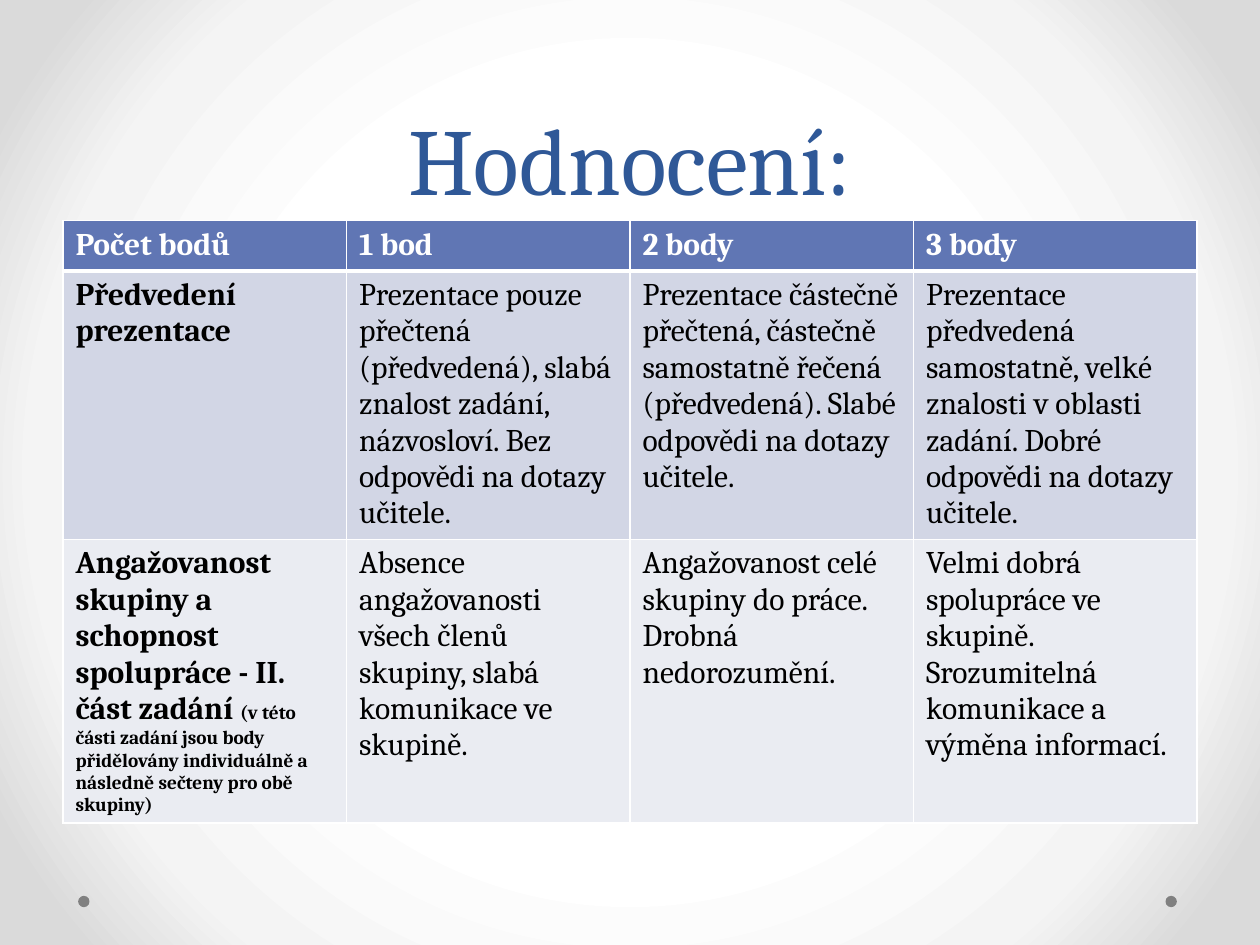
from lxml import etree
from pptx import Presentation
from pptx.dml.color import RGBColor
from pptx.enum import shapes, text
from pptx.oxml import ns, parse_xml
from pptx.util import Inches, Pt

FONT = "Cambria"
COLORS = {
    "title": "2F5897", "header": "6076B4", "band": "D2D6E5", "light": "EAECF2",
    "white": "FFFFFF", "black": "000000", "dot": "808080",
}
BACKDROP = [(50, "FFFFFF"), (76, "F4F4F4"), (92, "DADADA")]
ROW_HEIGHTS = [0.4, 2.13, 2.25]
ROW_FILLS = ["header", "band", "light"]
NOTE = ("(v této části zadání jsou body přidělovány individuálně "
        "a následně sečteny pro obě skupiny)")
RUBRIC = [
    ["Počet bodů", "1 bod", "2 body", "3 body"],
    ["Předvedení prezentace",
     "Prezentace pouze přečtená (předvedená), slabá znalost zadání, názvosloví. "
     "Bez odpovědi na dotazy učitele.",
     "Prezentace částečně přečtená, částečně samostatně řečená (předvedená). "
     "Slabé odpovědi na dotazy učitele.",
     "Prezentace předvedená samostatně, velké znalosti v oblasti zadání. "
     "Dobré odpovědi na dotazy učitele."],
    ["Angažovanost skupiny a schopnost spolupráce - II. část zadání ",
     "Absence angažovanosti všech členů skupiny, slabá komunikace ve skupině.",
     "Angažovanost celé skupiny do práce. Drobná nedorozumění.",
     "Velmi dobrá spolupráce ve skupině. Srozumitelná komunikace a výměna informací."],
]


def rgb(name):
    return RGBColor.from_string(COLORS[name])


def add_span(para, words, size, color, bold=False):
    span = para.add_run()
    span.text = words
    span.font.name, span.font.size, span.font.bold = FONT, Pt(size), bold
    span.font.color.rgb = rgb(color)


def paint_backdrop(page):
    """Fill the background with a circular gradient, light in the middle."""
    page.background.fill.gradient()
    old = page._element.xpath(".//p:bg//a:gradFill")[0]
    stops = "".join(f'<a:gs pos="{pos * 1000}"><a:srgbClr val="{color}"/></a:gs>'
                    for pos, color in BACKDROP)
    new = parse_xml(
        f'<a:gradFill {ns.nsdecls("a")} rotWithShape="1"><a:gsLst>{stops}</a:gsLst>'
        '<a:path path="circle"><a:fillToRect l="50000" t="50000" r="50000" b="50000"/>'
        '</a:path></a:gradFill>')
    old.getparent().replace(old, new)


def add_dots(page, lefts, top, size):
    for left in lefts:
        dot = page.shapes.add_shape(shapes.MSO_SHAPE.OVAL, Inches(left), Inches(top),
                                    Inches(size), Inches(size))
        dot.shadow.inherit = False
        dot.fill.solid()
        dot.fill.fore_color.rgb = rgb("dot")
        dot.line.fill.background()


def place_title(page, left, top, width, height):
    title = page.shapes.title
    title.left, title.top = Inches(left), Inches(top)
    title.width, title.height = Inches(width), Inches(height)
    frame = title.text_frame
    frame.auto_size = text.MSO_AUTO_SIZE.NONE
    frame.vertical_anchor = text.MSO_ANCHOR.BOTTOM
    para = frame.paragraphs[0]
    para.alignment = text.PP_ALIGN.CENTER
    para.line_spacing = Pt(58)
    add_span(para, "Hodnocení:", 54, "title")


def add_borders(cell, bottom):
    """Draw white borders, with the bottom one as wide as given in points."""
    props = cell._tc.get_or_add_tcPr()
    widths = {"lnL": 1, "lnR": 1, "lnT": 1, "lnB": bottom}
    for index, (side, width) in enumerate(widths.items()):
        line = etree.Element(ns.qn(f"a:{side}"), w=str(Pt(width)))
        fill = etree.SubElement(line, ns.qn("a:solidFill"))
        etree.SubElement(fill, ns.qn("a:srgbClr"), val=COLORS["white"])
        props.insert(index, line)


def add_rubric(page, left, top, width):
    frame = page.shapes.add_table(len(RUBRIC), len(RUBRIC[0]), Inches(left), Inches(top),
                                  Inches(width), Inches(sum(ROW_HEIGHTS)))
    table = frame.table
    for column in table.columns:
        column.width = Inches(width / len(RUBRIC[0]))
    for r, entries in enumerate(RUBRIC):
        table.rows[r].height = Inches(ROW_HEIGHTS[r])
        for c, words in enumerate(entries):
            cell = table.cell(r, c)
            cell.fill.solid()
            cell.fill.fore_color.rgb = rgb(ROW_FILLS[r])
            add_borders(cell, bottom=3 if r == 0 else 1)
            add_span(cell.text_frame.paragraphs[0], words, 18,
                     "white" if r == 0 else "black", bold=r == 0 or c == 0)
    last_label = table.cell(len(RUBRIC) - 1, 0).text_frame.paragraphs[0]
    add_span(last_label, NOTE, 11, "black", bold=True)


def main():
    deck = Presentation()
    deck.slide_width, deck.slide_height = Inches(10), Inches(7.5)
    page = deck.slides.add_slide(deck.slide_layouts[5])
    paint_backdrop(page)
    add_dots(page, lefts=[0.62, 9.25], top=7.11, size=0.09)
    place_title(page, 0.5, 0, 9, 1.75)
    add_rubric(page, 0.5, 1.75, 9)
    deck.save("out.pptx")


if __name__ == "__main__":
    main()
